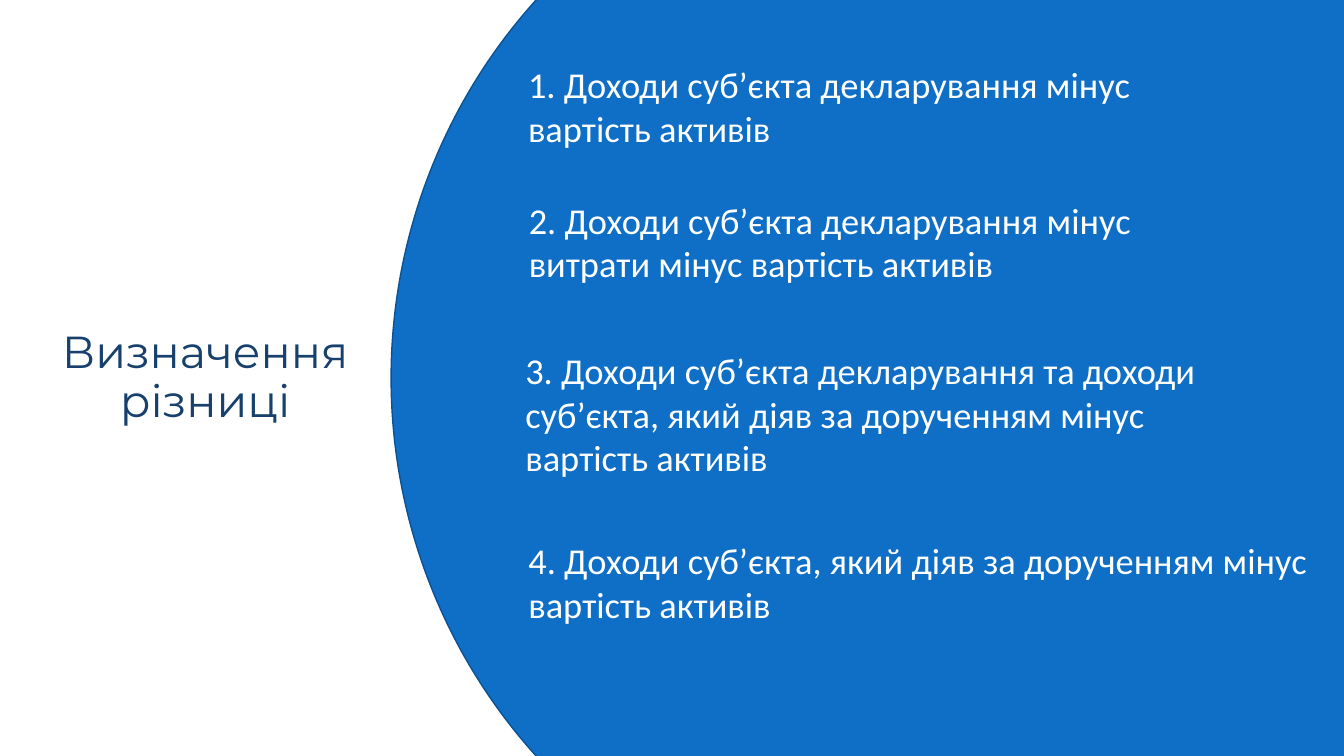
"""Build a slide that lists four ways to determine the difference."""
import dataclasses
from typing import Any

import pptx
import pptx.dml.color
import pptx.enum.shapes
import pptx.enum.text
import pptx.util

SLIDE_WIDTH = pptx.util.Inches(13.333)
SLIDE_HEIGHT = pptx.util.Inches(7.5)
BLUE, DARK_BLUE, NAVY, WHITE = "0F6FC6", "0B5292", "17406D", "FFFFFF"
PRESET = pptx.enum.shapes.MSO_SHAPE
ALIGN = pptx.enum.text.PP_ALIGN


@dataclasses.dataclass(frozen=True)
class Area:
    """Hold a position and size in percent of the slide's width and height."""

    left: float
    top: float
    width: float
    height: float

    def bounds(self) -> dict[str, int]:
        """Return the area in slide units."""
        return {
            "left": round(SLIDE_WIDTH * self.left / 100),
            "top": round(SLIDE_HEIGHT * self.top / 100),
            "width": round(SLIDE_WIDTH * self.width / 100),
            "height": round(SLIDE_HEIGHT * self.height / 100),
        }


@dataclasses.dataclass(frozen=True)
class Method:
    """Describe one way to determine the difference."""

    wording: str
    area: Area
    indent: float = 0


HEADING_AREA = Area(0, 34.4, 30.53, 31.33)
DISC_AREA = Area(29.1, -24.27, 82.8, 148.53)
METHODS = [
    Method("Доходи суб’єкта декларування мінус вартість активів",
           Area(38.25, 8.53, 52.58, 10.93)),
    Method("Доходи суб’єкта декларування мінус витрати мінус вартість активів",
           Area(38.25, 25.47, 53.48, 12.93)),
    Method("Доходи суб’єкта декларування та доходи суб’єкта, "
           "який діяв за дорученням мінус вартість активів",
           Area(37.8, 47.47, 56.1, 14.53), 0.15),
    Method("Доходи суб’єкта, який діяв за дорученням мінус вартість активів",
           Area(38.25, 71.07, 61.8, 11.73)),
]


def color(code: str) -> pptx.dml.color.RGBColor:
    """Turn a hex string into a colour."""
    return pptx.dml.color.RGBColor.from_string(code)


def apply(target: Any, values: dict[str, Any]) -> None:
    """Set each named attribute of the target."""
    for name, value in values.items():
        setattr(target, name, value)


def write(holder: Any, wording: str, ink: str, font: dict[str, Any],
          paragraph_format: dict[str, Any]) -> None:
    """Put one formatted paragraph in the holder's text frame."""
    frame = holder.text_frame
    frame.text = wording
    apply(frame, {
        "word_wrap": True,
        "auto_size": pptx.enum.text.MSO_AUTO_SIZE.NONE,
        "vertical_anchor": pptx.enum.text.MSO_ANCHOR.MIDDLE,
    })
    paragraph = frame.paragraphs[0]
    apply(paragraph, paragraph_format)
    run_font = paragraph.runs[0].font
    apply(run_font, font)
    run_font.color.rgb = color(ink)


def draw_panel(slide: Any, preset: Any, area: Area) -> Any:
    """Draw a flat blue shape without an outline."""
    panel = slide.shapes.add_shape(preset, **area.bounds())
    panel.shadow.inherit = False
    panel.fill.solid()
    panel.fill.fore_color.rgb = color(BLUE)
    panel.line.fill.background()
    return panel


def draw_heading(slide: Any) -> None:
    """Place and format the slide's title."""
    heading = slide.shapes.title
    apply(heading, HEADING_AREA.bounds())
    write(heading, "Визначення різниці", NAVY,
          {"name": "Montserrat", "size": pptx.util.Pt(32)},
          {"alignment": ALIGN.CENTER, "line_spacing": 0.9})


def draw_disc(slide: Any) -> None:
    """Draw the outlined disc behind the methods."""
    disc = draw_panel(slide, PRESET.OVAL, DISC_AREA)
    disc.line.color.rgb = color(DARK_BLUE)
    disc.line.width = pptx.util.Pt(1)


def draw_method(slide: Any, number: int, method: Method) -> None:
    """Draw one numbered method."""
    panel = draw_panel(slide, PRESET.ROUNDED_RECTANGLE, method.area)
    write(panel, f"{number}. {method.wording}", WHITE,
          {"name": "Calibri", "size": pptx.util.Pt(26)},
          {"alignment": ALIGN.LEFT})
    if method.indent:
        properties = panel.text_frame.paragraphs[0]._p.get_or_add_pPr()
        properties.set("marL", str(round(SLIDE_WIDTH * method.indent / 100)))


def main() -> None:
    """Build and save the presentation."""
    deck = pptx.Presentation()
    apply(deck, {"slide_width": SLIDE_WIDTH, "slide_height": SLIDE_HEIGHT})
    slide = deck.slides.add_slide(deck.slide_layouts.get_by_name("Title Only"))
    draw_heading(slide)
    draw_disc(slide)
    for number, method in enumerate(METHODS, start=1):
        draw_method(slide, number, method)
    deck.save("out.pptx")


if __name__ == "__main__":
    main()
